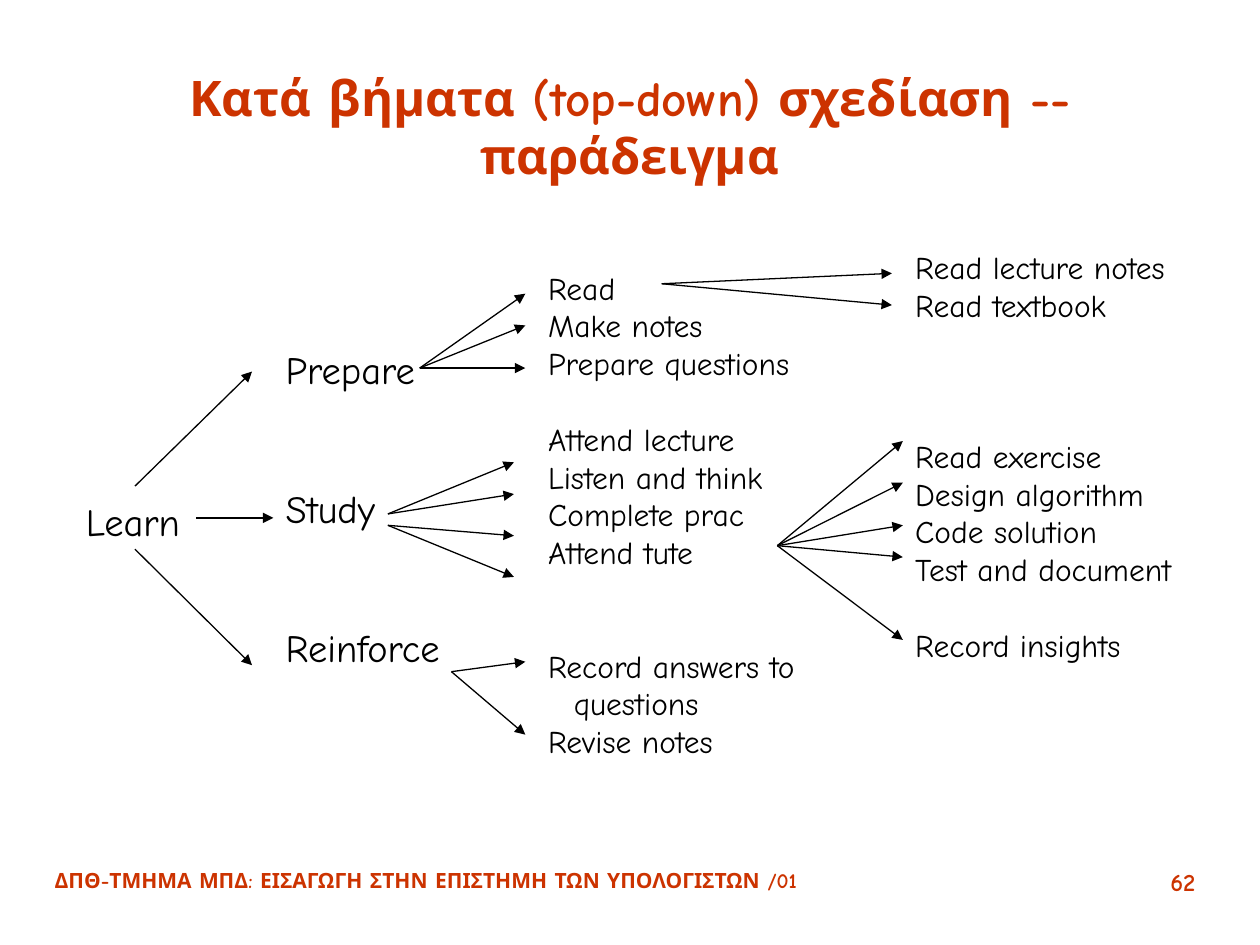
"""Build the top-down design example slide: a tree of learning steps."""
from lxml.etree import SubElement
from pptx import Presentation
from pptx.dml.color import RGBColor
from pptx.enum.shapes import MSO_CONNECTOR as CONNECTOR
from pptx.enum.text import MSO_ANCHOR as ANCHOR, PP_ALIGN as ALIGN
from pptx.oxml.ns import qn
from pptx.util import Cm, Pt

RED = RGBColor(0xCC, 0x33, 0x00)
BLACK = RGBColor(0x00, 0x00, 0x00)
FONT = "Comic Neue"
LINE_PITCH = 1.2

deck = Presentation()
deck.slide_width, deck.slide_height = Cm(25.4), Cm(19.05)
slide = deck.slides.add_slide(deck.slide_layouts[6])


def add_text(text, box, size, color=BLACK, bold=False, align=ALIGN.LEFT,
             anchor=ANCHOR.TOP, wrap=True, hanging=0, skipped=None):
    frame = slide.shapes.add_textbox(*map(Cm, box)).text_frame
    frame.word_wrap = wrap
    frame.vertical_anchor = anchor
    frame.text = text
    for paragraph in frame.paragraphs:
        paragraph.alignment = align
        lines_above = (skipped or {}).get(paragraph.text, 0)
        if lines_above:
            paragraph.space_before = Pt(round(lines_above * size * LINE_PITCH, 1))
        if hanging:
            properties = paragraph._p.get_or_add_pPr()
            properties.set("marL", str(Cm(hanging)))
            properties.set("indent", str(-Cm(hanging)))
        font = paragraph.runs[0].font
        font.name, font.size, font.bold = FONT, Pt(size), bold
        font.color.rgb = color


add_text("ΔΠΘ-ΤΜΗΜΑ ΜΠΔ: ΕΙΣΑΓΩΓΗ ΣΤΗΝ ΕΠΙΣΤΗΜΗ ΤΩΝ ΥΠΟΛΟΓΙΣΤΩΝ /01",
         (0.85, 17.36, 19.69, 1.27), 12, color=RED, bold=True)
add_text("62", (21.17, 17.36, 3.18, 1.27), 14, color=RED, bold=True,
         align=ALIGN.RIGHT)
add_text("Κατά βήματα (top-down) σχεδίαση -- παράδειγμα",
         (1.9, 1.27, 21.59, 2.54), 28, color=RED, bold=True,
         align=ALIGN.CENTER, anchor=ANCHOR.MIDDLE)

add_text("Learn", (1.48, 9.91, 2.54, 1.19), 22, wrap=False)
add_text("Prepare\nStudy\nReinforce", (5.51, 6.86, 4.04, 6.76), 22,
         wrap=False, skipped={"Study": 2, "Reinforce": 2})

activities = ["Read", "Make notes", "Prepare questions",
              "Attend lecture", "Listen and think", "Complete prac",
              "Attend tute", "Record answers to questions", "Revise notes"]
add_text("\n".join(activities), (10.8, 5.29, 6.35, 10.19), 18, hanging=0.52,
         skipped={"Attend lecture": 1, "Record answers to questions": 2})

details = ["Read lecture notes", "Read textbook", "Read exercise",
           "Design algorithm", "Code solution", "Test and document",
           "Record insights"]
add_text("\n".join(details), (18.2, 4.87, 6.35, 10.52), 18, hanging=0.52,
         skipped={"Read exercise": 3, "Record insights": 1})

fans = [
    ((2.72, 9.8), 5.08, [7.49]),
    ((2.72, 11.07), 5.08, [13.41]),
    ((3.96, 10.44), 5.51, [10.44]),
    ((8.46, 7.42), 10.59, [5.92, 6.56, 7.42]),
    ((7.82, 10.36), 10.36, [9.32, 9.96]),
    ((7.82, 10.59), 10.36, [10.8, 11.63]),
    ((9.1, 13.54), 10.59, [13.34, 14.81]),
    ((13.34, 5.72), 17.98, [5.51, 6.15]),
    ((15.67, 11), 18.2, [8.89, 9.73, 10.59, 11.23, 12.9]),
]
for (start_x, start_y), tip_x, tip_heights in fans:
    for tip_y in tip_heights:
        arrow = slide.shapes.add_connector(
            CONNECTOR.STRAIGHT, Cm(start_x), Cm(start_y), Cm(tip_x), Cm(tip_y))
        arrow.line.color.rgb = BLACK
        arrow.line.width = Pt(0.75)
        SubElement(arrow.line._get_or_add_ln(), qn("a:tailEnd"), type="triangle")
        SubElement(arrow._element.spPr, qn("a:effectLst"))

deck.save("out.pptx")
